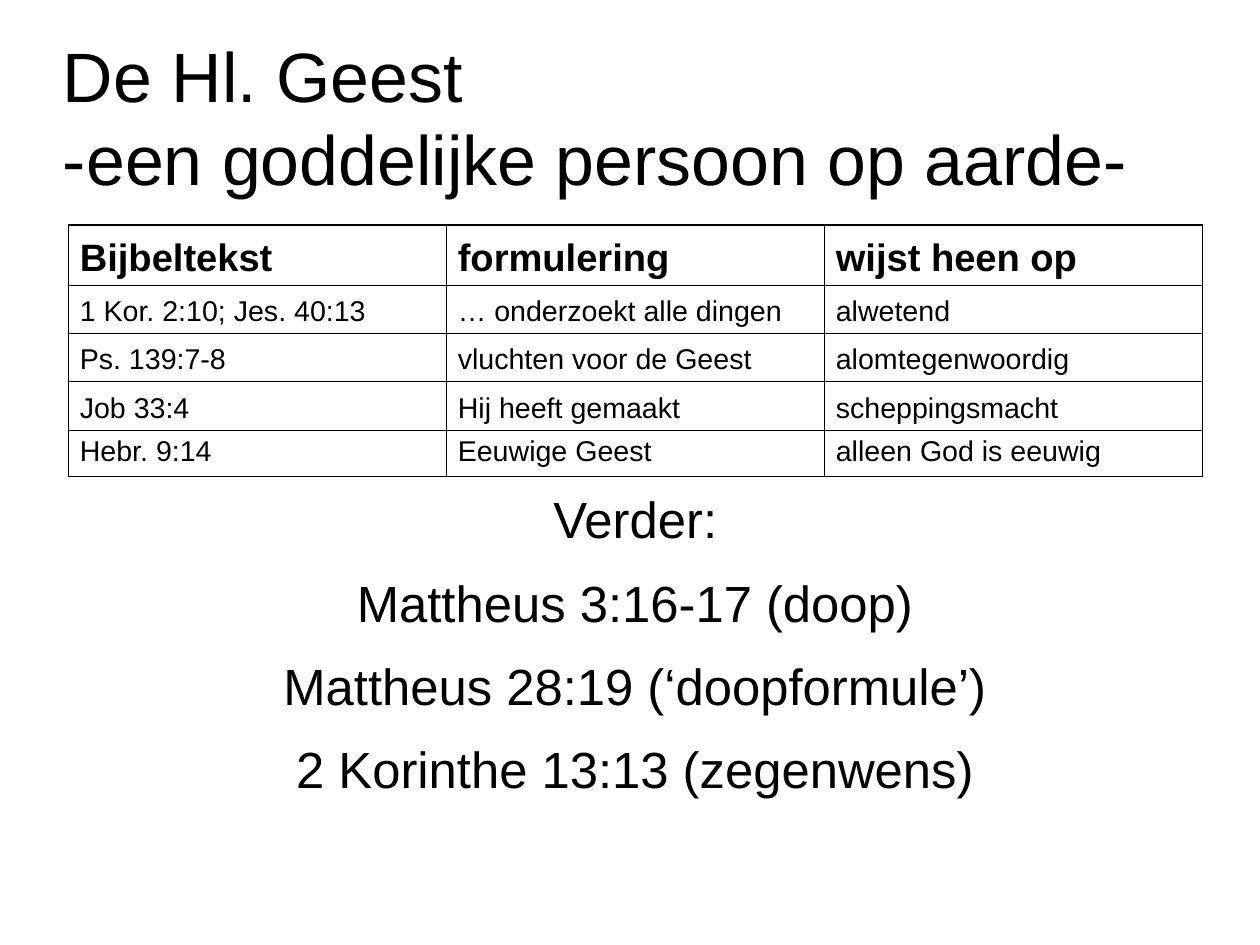
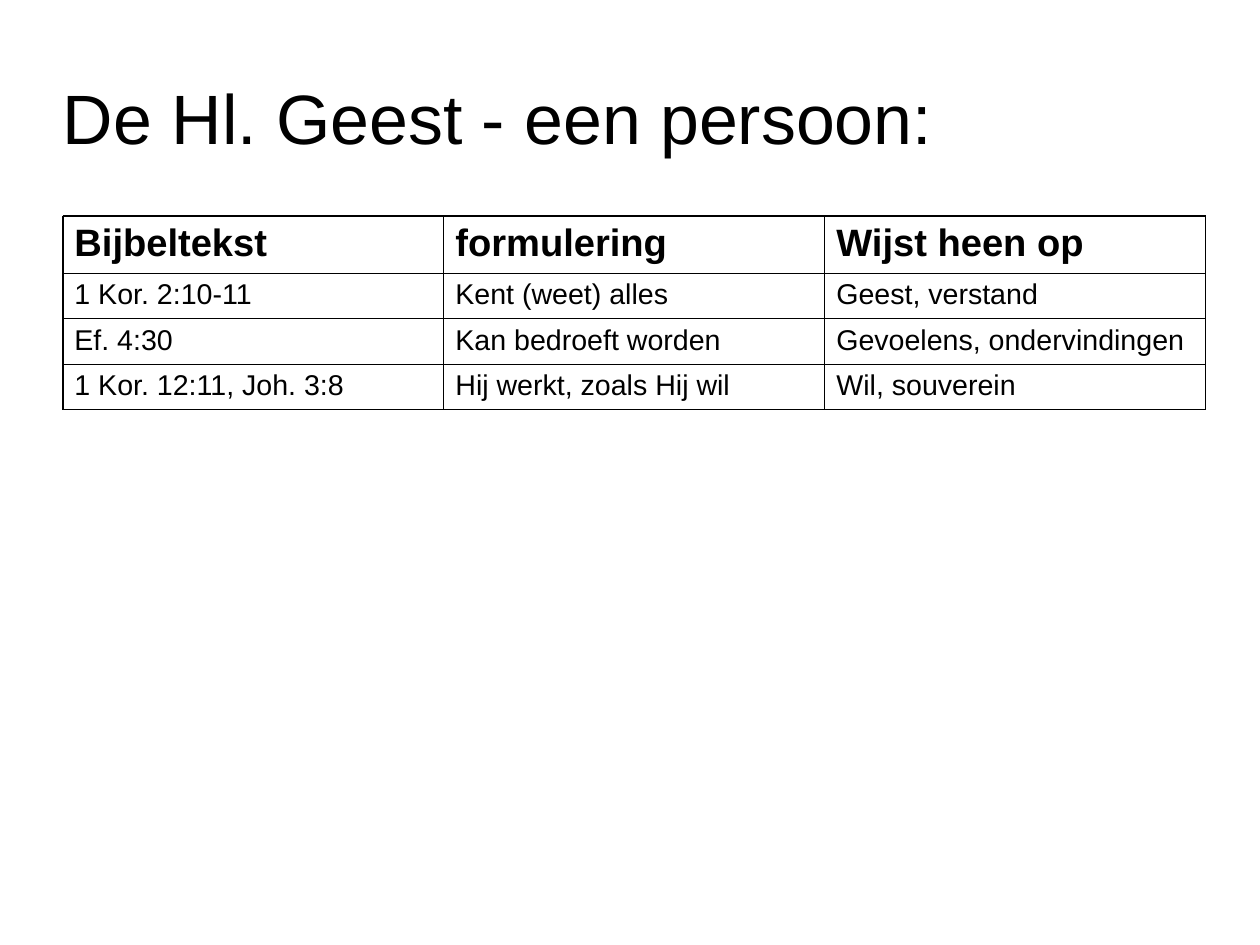
from lxml.etree import SubElement
from pptx import Presentation
from pptx.dml.color import RGBColor
from pptx.enum.text import MSO_ANCHOR, MSO_AUTO_SIZE, PP_ALIGN
from pptx.oxml.ns import qn
from pptx.util import Cm, Pt

COLOURS = {"ink": "000000", "paper": "FFFFFF"}
FONT = "Arial"
TITLE_LEFT, CONTENT_WIDTH = 1.4, 25.2
BORDER_WIDTH = Pt(0.75)


def write(frame, lines, size, bold=False, align=PP_ALIGN.LEFT, spacing=None, after=0):
    """Fill a text frame with one paragraph per line; a \\v breaks a line."""
    for index, line in enumerate(lines):
        para = frame.add_paragraph() if index else frame.paragraphs[0]
        para.text = line
        para.alignment = align
        para.space_after = Pt(after)
        if spacing:
            para.line_spacing = spacing
        for span in para.runs:
            span.font.name = FONT
            span.font.size = Pt(size)
            span.font.bold = bold
            span.font.color.rgb = RGBColor.from_string(COLOURS["ink"])


def place(shape, left, top, width, height):
    shape.left, shape.top = Cm(left), Cm(top)
    shape.width, shape.height = Cm(width), Cm(height)


def set_up_frame(frame):
    frame.word_wrap = True
    frame.auto_size = MSO_AUTO_SIZE.NONE
    frame.vertical_anchor = MSO_ANCHOR.MIDDLE
    frame.margin_left = frame.margin_right = 0
    frame.margin_top = frame.margin_bottom = 0


def add_page(deck, title, top, height):
    page = deck.slides.add_slide(deck.slide_layouts[5])
    page.background.fill.solid()
    page.background.fill.fore_color.rgb = RGBColor.from_string(COLOURS["paper"])
    place(page.shapes.title, TITLE_LEFT, top, CONTENT_WIDTH, height)
    set_up_frame(page.shapes.title.text_frame)
    write(page.shapes.title.text_frame, [title], 44)
    return page


def add_centred_text(page, lines, left, top, width, height):
    box = page.shapes.add_textbox(Cm(left), Cm(top), Cm(width), Cm(height))
    set_up_frame(box.text_frame)
    write(box.text_frame, lines, 32, align=PP_ALIGN.CENTER, after=14.1)


def set_borders(cell):
    properties = cell._tc.get_or_add_tcPr()
    for index, side in enumerate(("a:lnL", "a:lnR", "a:lnT", "a:lnB")):
        line = SubElement(properties, qn(side), w=str(BORDER_WIDTH))
        fill = SubElement(line, qn("a:solidFill"))
        SubElement(fill, qn("a:srgbClr"), val=COLOURS["ink"])
        properties.insert(index, line)  # borders come before the cell fill


def add_grid(page, rows, left, top, width, head_height, row_height, spacings):
    """Draw a bordered table with a bold heading row and equal columns."""
    columns = len(rows[0])
    height = head_height + row_height * (len(rows) - 1)
    table = page.shapes.add_table(
        len(rows), columns, Cm(left), Cm(top), Cm(width), Cm(height)).table
    table.first_row = table.horz_banding = False
    for column in table.columns:
        column.width = Cm(width / columns)
    for index, (texts, spacing) in enumerate(zip(rows, spacings)):
        is_head = index == 0
        table.rows[index].height = Cm(head_height if is_head else row_height)
        for cell, text in zip(table.rows[index].cells, texts):
            cell.fill.background()
            set_borders(cell)
            write(cell.text_frame, [text], 24 if is_head else 18,
                  bold=is_head, spacing=spacing)


def main():
    deck = Presentation()
    deck.slide_width, deck.slide_height = Cm(28), Cm(21)

    # Divine person
    page = add_page(deck, "De Hl. Geest\v-een goddelijke persoon op aarde-", 0.7, 3.76)
    add_centred_text(page, [
        "Verder:",
        "Mattheus 3:16-17 (doop)",
        "Mattheus 28:19 (‘doopformule’)",
        "2 Korinthe 13:13 (zegenwens)",
    ], 1.52, 10.82, CONTENT_WIDTH, 6.96)
    add_grid(page, [
        ("Bijbeltekst", "formulering", "wijst heen op"),
        ("1 Kor. 2:10; Jes. 40:13", "… onderzoekt alle dingen", "alwetend"),
        ("Ps. 139:7-8", "vluchten voor de Geest", "alomtegenwoordig"),
        ("Job 33:4", "Hij heeft gemaakt", "scheppingsmacht"),
        ("Hebr. 9:14", "Eeuwige Geest", "alleen God is eeuwig"),
    ], 1.52, 5, CONTENT_WIDTH, 1.32, 1.04, [1.15] * 4 + [None])

    # Person
    page = add_page(deck, "De Hl. Geest - een persoon:", 1.65, 1.88)
    add_grid(page, [
        ("Bijbeltekst", "formulering", "Wijst heen op"),
        ("1 Kor. 2:10-11", "Kent (weet) alles", "Geest, verstand"),
        ("Ef. 4:30", "Kan bedroeft worden", "Gevoelens, ondervindingen"),
        ("1 Kor. 12:11, Joh. 3:8", "Hij werkt, zoals Hij wil", "Wil, souverein"),
    ], TITLE_LEFT, 4.8, 25.4, 1.27, 1.01, [None] * 4)

    deck.save("out.pptx")


if __name__ == "__main__":
    main()
